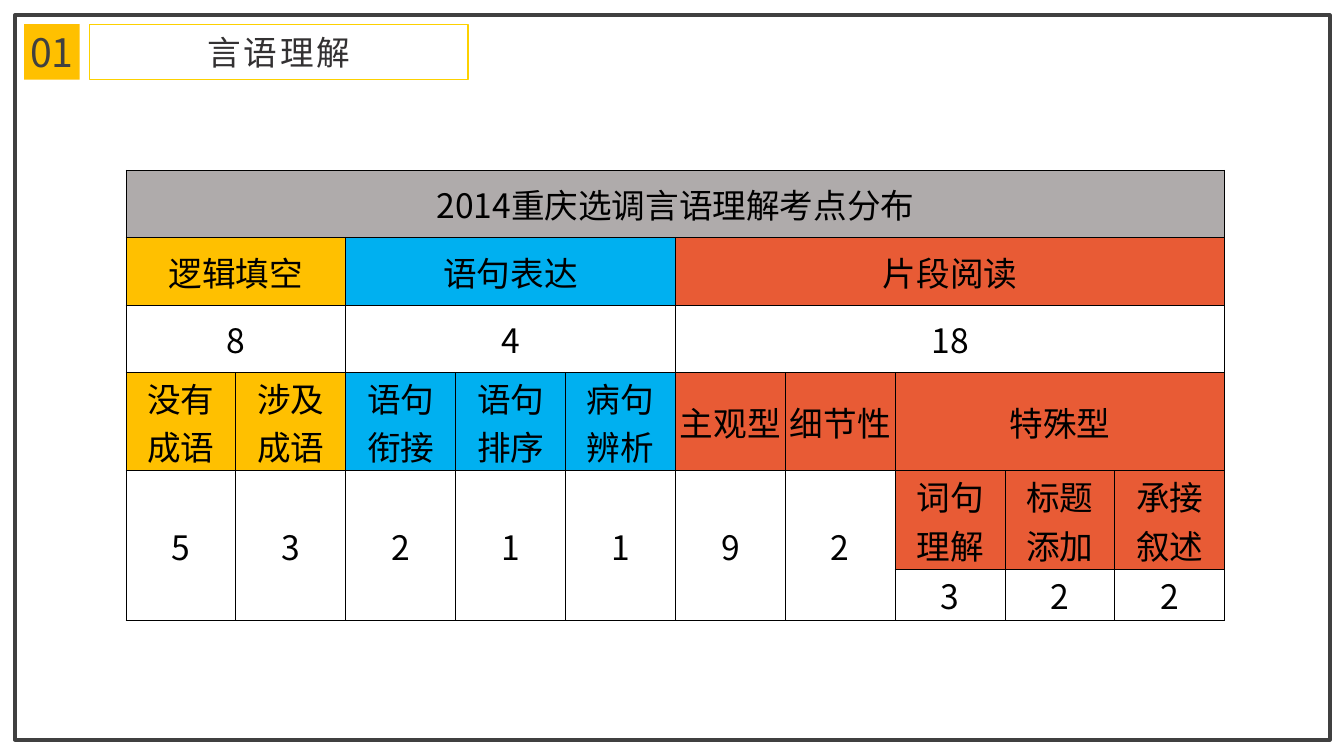
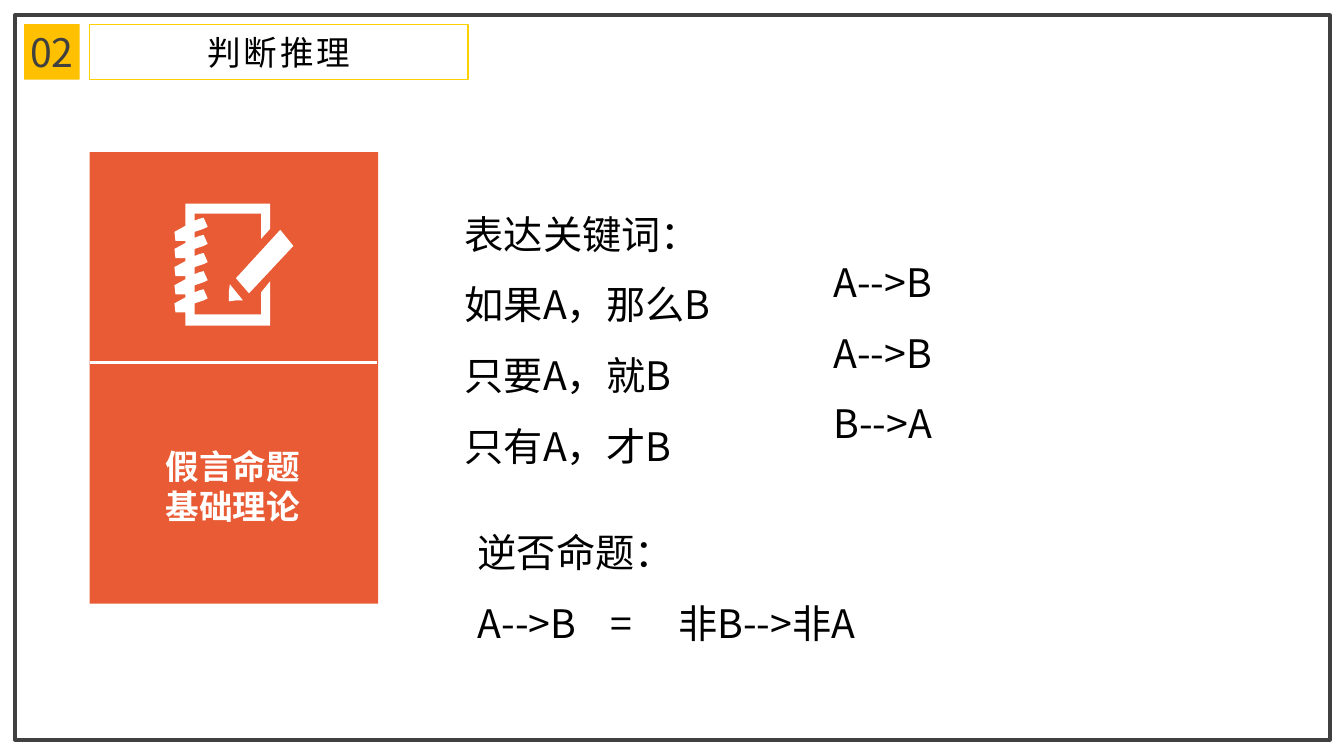
"""Build two slides on verbal comprehension and judgement reasoning."""
from dataclasses import dataclass
from typing import NamedTuple

from lxml import etree
from pptx import Presentation
from pptx.dml.color import RGBColor
from pptx.enum.shapes import MSO_CONNECTOR, MSO_SHAPE
from pptx.enum.text import MSO_ANCHOR, MSO_AUTO_SIZE, PP_ALIGN
from pptx.oxml.ns import qn
from pptx.shapes.autoshape import Shape
from pptx.slide import Slide
from pptx.table import Table, _Cell
from pptx.text.text import TextFrame
from pptx.util import Emu, Pt

RECTANGLE = MSO_SHAPE.RECTANGLE
STRAIGHT = MSO_CONNECTOR.STRAIGHT
CENTER, LEFT = PP_ALIGN.CENTER, PP_ALIGN.LEFT
MIDDLE, TOP = MSO_ANCHOR.MIDDLE, MSO_ANCHOR.TOP
NO_FIT = MSO_AUTO_SIZE.NONE

EMU_PER_PX = 9144
FONT = "Noto Sans CJK SC"
BLACK, WHITE, CHARCOAL, INK = "000000", "FFFFFF", "404040", "333132"
AMBER, GOLD, BLUE, ORANGE, GREY = "FFC000", "FDD100", "00B0F0", "E85B35", "AFABAB"

COLUMN_WIDTH = 109
ROW_HEIGHTS = (67, 67, 67, 97, 98, 51)
COIL_TOPS = (219, 236, 254, 272, 290)


class Box(NamedTuple):
    """A rectangle in px."""

    left: int
    top: int
    width: int
    height: int


@dataclass(frozen=True)
class TextStyle:
    """The look of a block of text."""

    size: int
    color: str = BLACK
    align: PP_ALIGN = CENTER
    bold: bool = False
    tracking: int = 0
    line_spacing: float = 1.0


@dataclass(frozen=True)
class Point:
    """A test point with its question count or its finer details."""

    label: str
    count: str = ""
    details: tuple["Point", ...] = ()

    @property
    def width(self) -> int:
        """Return the number of table columns taken."""
        return len(self.details) or 1


@dataclass(frozen=True)
class Topic:
    """A group of test points."""

    label: str
    count: str
    color: str
    points: tuple[Point, ...]


CELL_TEXT = TextStyle(24)
STATEMENT = TextStyle(28, align=LEFT, line_spacing=1.5)
TOPICS = (
    Topic("逻辑填空", "8", AMBER, (Point("没有\n成语", "5"), Point("涉及\n成语", "3"))),
    Topic("语句表达", "4", BLUE,
          (Point("语句\n衔接", "2"), Point("语句\n排序", "1"), Point("病句\n辨析", "1"))),
    Topic("片段阅读", "18", ORANGE, (
        Point("主观型", "9"),
        Point("细节性", "2"),
        Point("特殊型", details=(
            Point("词句\n理解", "3"), Point("标题\n添加", "2"), Point("承接\n叙述", "2"))),
    )),
)


def px(length: int) -> Emu:
    """Convert px to EMU."""
    return Emu(length * EMU_PER_PX)


def rgb(code: str) -> RGBColor:
    """Convert a hex string to a colour."""
    return RGBColor.from_string(code)


def place(shape: Shape, box: Box) -> None:
    """Move a shape into a box."""
    shape.left, shape.top, shape.width, shape.height = map(px, box)


def write(frame: TextFrame, text: str, style: TextStyle) -> None:
    """Write one paragraph per line of text."""
    for number, line in enumerate(text.split("\n")):
        paragraph = frame.paragraphs[0] if number == 0 else frame.add_paragraph()
        paragraph.alignment = style.align
        paragraph.line_spacing = style.line_spacing
        paragraph.space_before = paragraph.space_after = Pt(0)
        run = paragraph.add_run()
        run.text = line
        run.font.size = Pt(style.size)
        run.font.bold = style.bold
        run.font.color.rgb = rgb(style.color)
        run.font.name = FONT
        properties = run.font._element
        properties.set("lang", "zh-CN")
        properties.set("spc", str(style.tracking * 100))
        etree.SubElement(properties, qn("a:ea")).set("typeface", FONT)


def setup_frame(frame: TextFrame, anchor: MSO_ANCHOR) -> None:
    """Make a text frame wrap at a fixed size."""
    frame.word_wrap = True
    frame.auto_size = NO_FIT
    frame.vertical_anchor = anchor


def add_block(slide: Slide, box: Box, fill: str = "", line: str = "",
              weight: float = 1) -> Shape:
    """Draw a plain rectangle."""
    block = slide.shapes.add_shape(RECTANGLE, *map(px, box))
    paint(block, fill)
    if line:
        block.line.color.rgb = rgb(line)
        block.line.width = Pt(weight)
    return block


def paint(shape: Shape, fill: str) -> None:
    """Give a shape a flat fill without outline or shadow."""
    shape.shadow.inherit = False
    shape.line.fill.background()
    if fill:
        shape.fill.solid()
        shape.fill.fore_color.rgb = rgb(fill)
    else:
        shape.fill.background()


def add_text(slide: Slide, box: Box, text: str, style: TextStyle) -> TextFrame:
    """Add a text box."""
    frame = slide.shapes.add_textbox(*map(px, box)).text_frame
    setup_frame(frame, TOP)
    write(frame, text, style)
    return frame


def add_header(slide: Slide, number: str, heading: str, color: str) -> None:
    """Draw the border, section number and title."""
    add_block(slide, Box(15, 15, 1304, 719), line=CHARCOAL, weight=2.63)
    badge = add_block(slide, Box(24, 24, 55, 55), AMBER).text_frame
    setup_frame(badge, MIDDLE)
    badge.margin_left = badge.margin_right = badge.margin_top = badge.margin_bottom = 0
    write(badge, number, TextStyle(28, CHARCOAL))
    title = slide.shapes.title
    place(title, Box(89, 24, 375, 55))
    title.line.color.rgb = rgb(GOLD)
    title.line.width = Pt(1)
    setup_frame(title.text_frame, MIDDLE)
    write(title.text_frame, heading, TextStyle(24, color, tracking=2))


def format_cell(cell: _Cell) -> None:
    """Give a cell black borders, no fill and no margins."""
    cell.margin_left = cell.margin_right = cell.margin_top = cell.margin_bottom = 0
    cell.vertical_anchor = MIDDLE
    cell.fill.background()
    properties = cell._tc.get_or_add_tcPr()
    for position, side in enumerate(("lnL", "lnR", "lnT", "lnB")):
        border = etree.Element(qn(f"a:{side}"), w=str(Pt(0.75)))
        solid = etree.SubElement(border, qn("a:solidFill"))
        etree.SubElement(solid, qn("a:srgbClr")).set("val", BLACK)
        properties.insert(position, border)


def fill_cell(table: Table, row: int, column: int, text: str, color: str = "",
              rows: int = 1, columns: int = 1) -> None:
    """Merge the spanned cells, then colour and label them."""
    cell = table.cell(row, column)
    if rows * columns > 1:
        cell.merge(table.cell(row + rows - 1, column + columns - 1))
    if color:
        cell.fill.solid()
        cell.fill.fore_color.rgb = rgb(color)
    write(cell.text_frame, text, CELL_TEXT)


def add_distribution(slide: Slide) -> None:
    """Add the table of test points."""
    total = sum(point.width for topic in TOPICS for point in topic.points)
    box = Box(125, 169, COLUMN_WIDTH * total, sum(ROW_HEIGHTS))
    table = slide.shapes.add_table(len(ROW_HEIGHTS), total, *map(px, box)).table
    table.first_row = table.horz_banding = False
    for row, height in zip(table.rows, ROW_HEIGHTS):
        row.height = px(height)
    for cell in table.iter_cells():
        format_cell(cell)
    fill_cell(table, 0, 0, "2014重庆选调言语理解考点分布", GREY, columns=total)
    column = 0
    for topic in TOPICS:
        width = sum(point.width for point in topic.points)
        fill_cell(table, 1, column, topic.label, topic.color, columns=width)
        fill_cell(table, 2, column, topic.count, columns=width)
        for point in topic.points:
            fill_cell(table, 3, column, point.label, topic.color, columns=point.width)
            if not point.details:
                fill_cell(table, 4, column, point.count, rows=2)
            for offset, detail in enumerate(point.details):
                fill_cell(table, 4, column + offset, detail.label, topic.color)
                fill_cell(table, 5, column + offset, detail.count)
            column += point.width


def add_notebook(slide: Slide) -> None:
    """Draw the spiral notebook with a pencil."""
    notebook = [(184, 202), (268, 202), (268, 227), (259, 237), (259, 212), (193, 212)]
    for top in COIL_TOPS:
        notebook += [(193, top), (198, top - 2), (202, top - 3), (206, top + 6),
                     (202, top + 8), (193, top + 11)]
    notebook += [(193, 312), (259, 312), (259, 290), (268, 279), (268, 323), (184, 323)]
    for top in reversed(COIL_TOPS):
        notebook += [(184, top + 20), (174, top + 20), (173, top + 11), (184, top + 5)]
    tip = [(227, 299), (234, 298), (241, 298), (228, 282), (227, 290)]
    pencil = [(278, 228), (234, 276), (247, 291), (291, 244)]
    builder = slide.shapes.build_freeform(*notebook[0], scale=EMU_PER_PX)
    builder.add_line_segments(notebook[1:])
    for outline in (tip, pencil):
        builder.move_to(*outline[0])
        builder.add_line_segments(outline[1:])
    paint(builder.convert_to_shape(), WHITE)


def add_theory_card(slide: Slide) -> None:
    """Draw the orange card with its icon, divider and label."""
    add_block(slide, Box(89, 151, 286, 448), ORANGE)
    add_text(slide, Box(147, 437, 168, 93), "假言命题\n基础理论",
             TextStyle(24, WHITE, bold=True))
    divider = slide.shapes.add_connector(STRAIGHT, px(89), px(360), px(374), px(360))
    divider.line.color.rgb = rgb(WHITE)
    divider.line.width = Pt(2.25)
    etree.SubElement(divider._element.spPr, qn("a:effectLst"))
    add_notebook(slide)


def add_keywords(slide: Slide) -> None:
    """Write the keyword list into the body placeholder."""
    body = slide.placeholders[1]
    place(body, Box(451, 180, 306, 290))
    setup_frame(body.text_frame, TOP)
    write(body.text_frame, "表达关键词：\n如果A，那么B\n只要A，就B\n只有A，才B", STATEMENT)
    for paragraph in body.text_frame.paragraphs:
        properties = paragraph._p.get_or_add_pPr()
        properties.set("marL", "0")
        properties.set("indent", "0")
        etree.SubElement(properties, qn("a:buNone"))


def add_contrapositive(slide: Slide) -> None:
    """Write the contrapositive rule, aligned on tab stops."""
    frame = add_text(slide, Box(464, 496, 535, 150),
                     "逆否命题：\nA-->B\t=\t非B-->非A", STATEMENT)
    stops = etree.SubElement(frame.paragraphs[1]._p.get_or_add_pPr(), qn("a:tabLst"))
    for position in (132, 199):
        etree.SubElement(stops, qn("a:tab"), pos=str(px(position)), algn="l")


def main() -> None:
    """Build and save the presentation."""
    deck = Presentation()
    deck.slide_width, deck.slide_height = px(1333), px(750)

    comprehension = deck.slides.add_slide(deck.slide_layouts[5])
    add_header(comprehension, "01", "言语理解", INK)
    add_distribution(comprehension)

    reasoning = deck.slides.add_slide(deck.slide_layouts[1])
    add_header(reasoning, "02", "判断推理", BLACK)
    add_theory_card(reasoning)
    add_keywords(reasoning)
    add_text(reasoning, Box(817, 228, 306, 220), "A-->B\nA-->B\nB-->A", STATEMENT)
    add_contrapositive(reasoning)
    deck.save("out.pptx")


if __name__ == "__main__":
    main()
